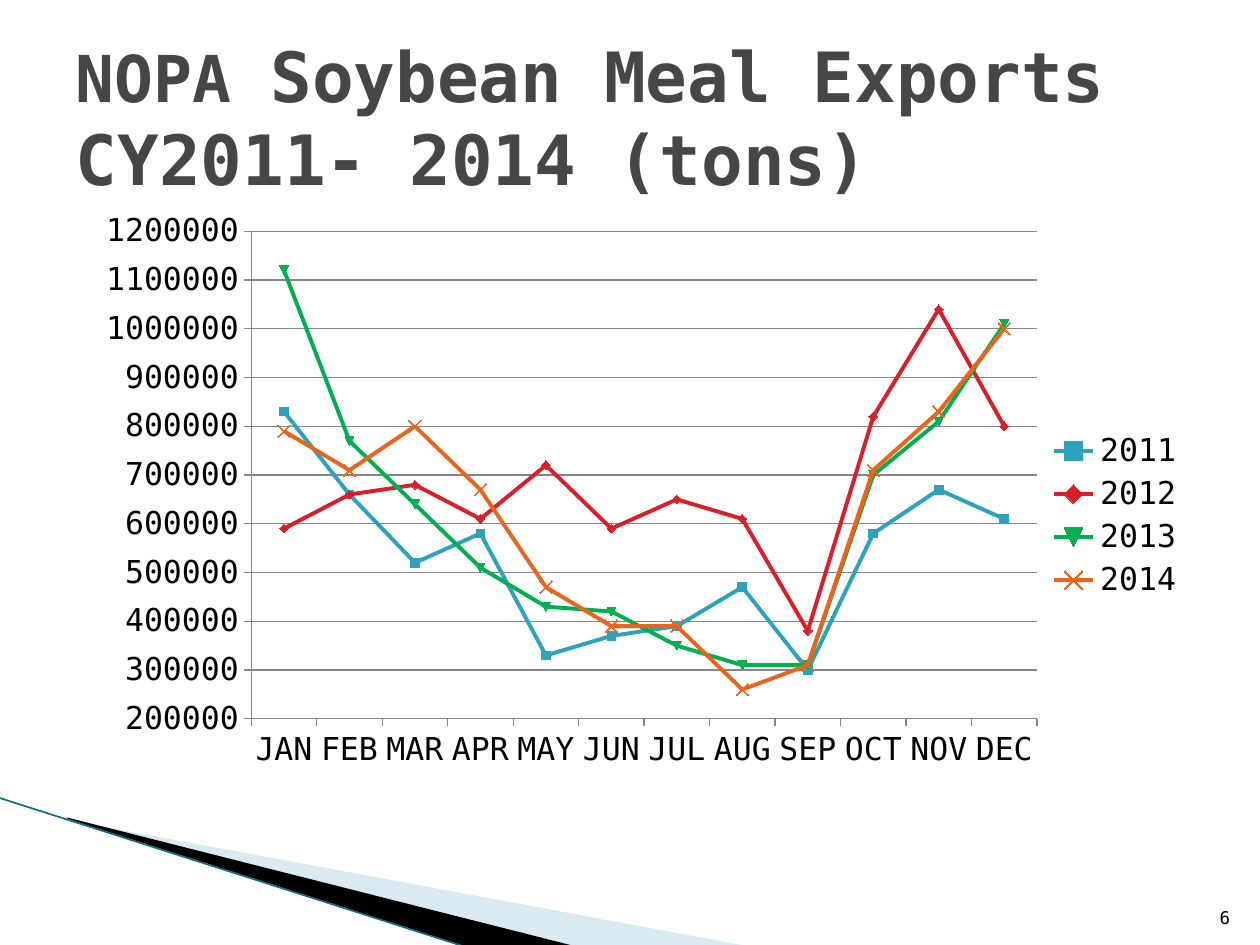
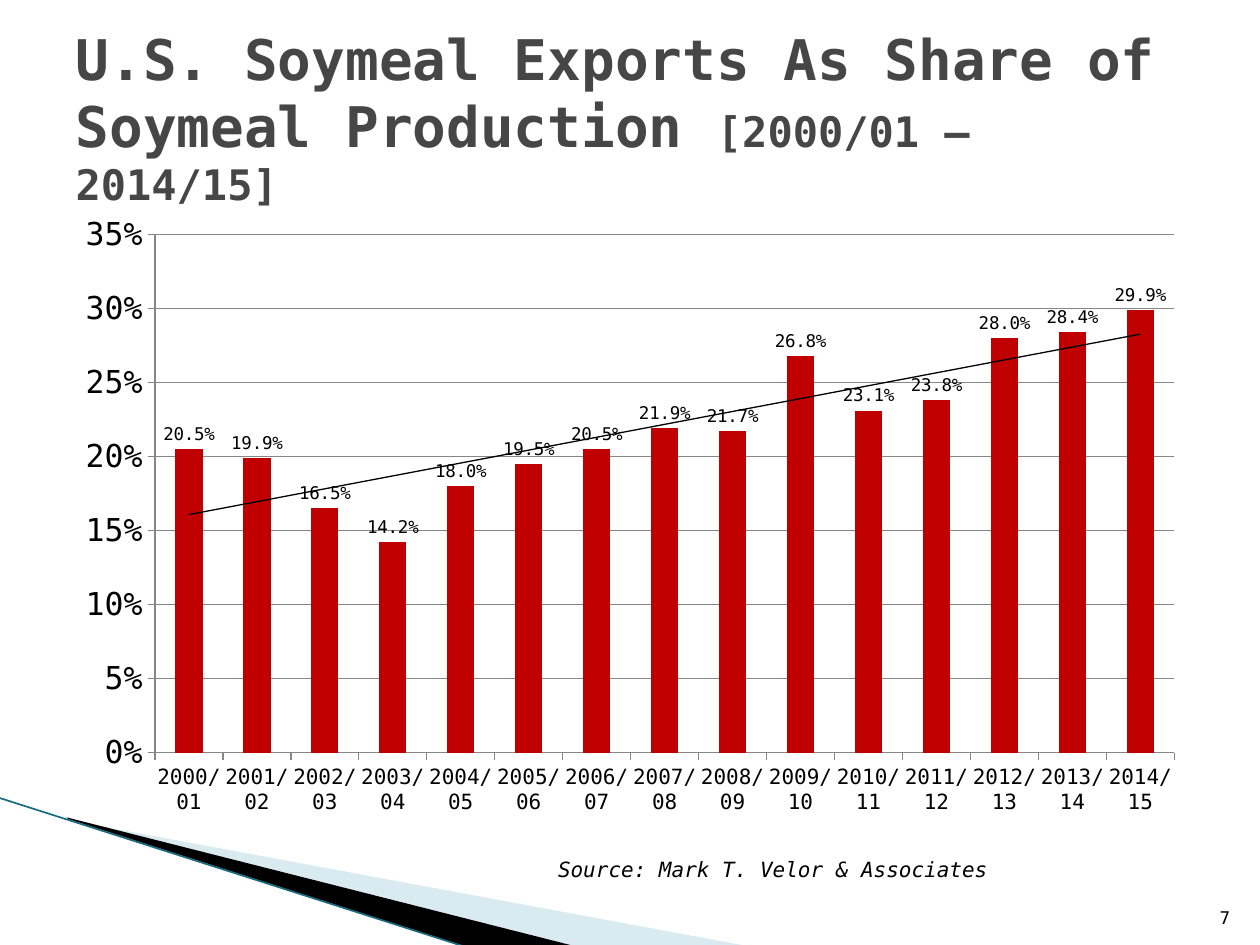
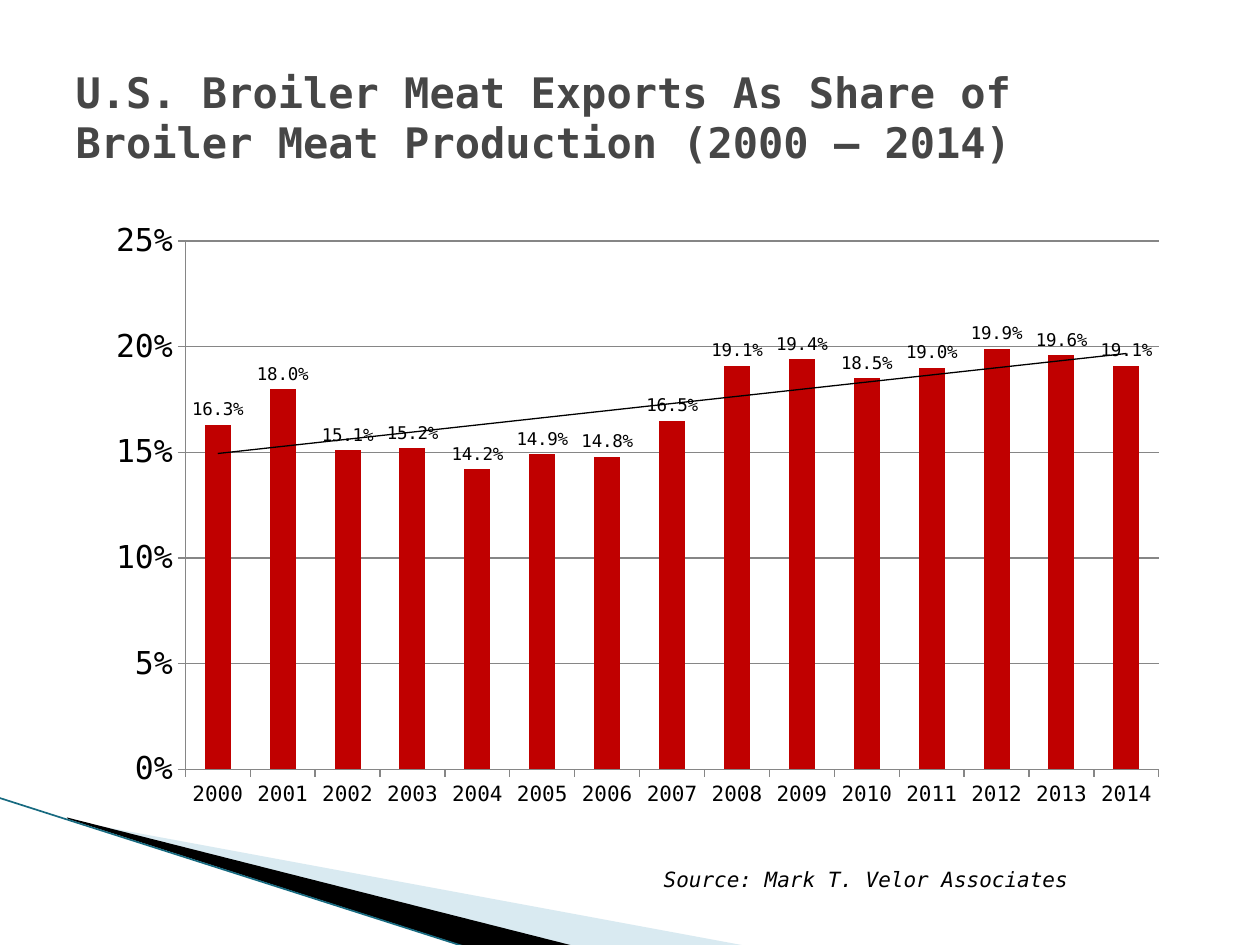
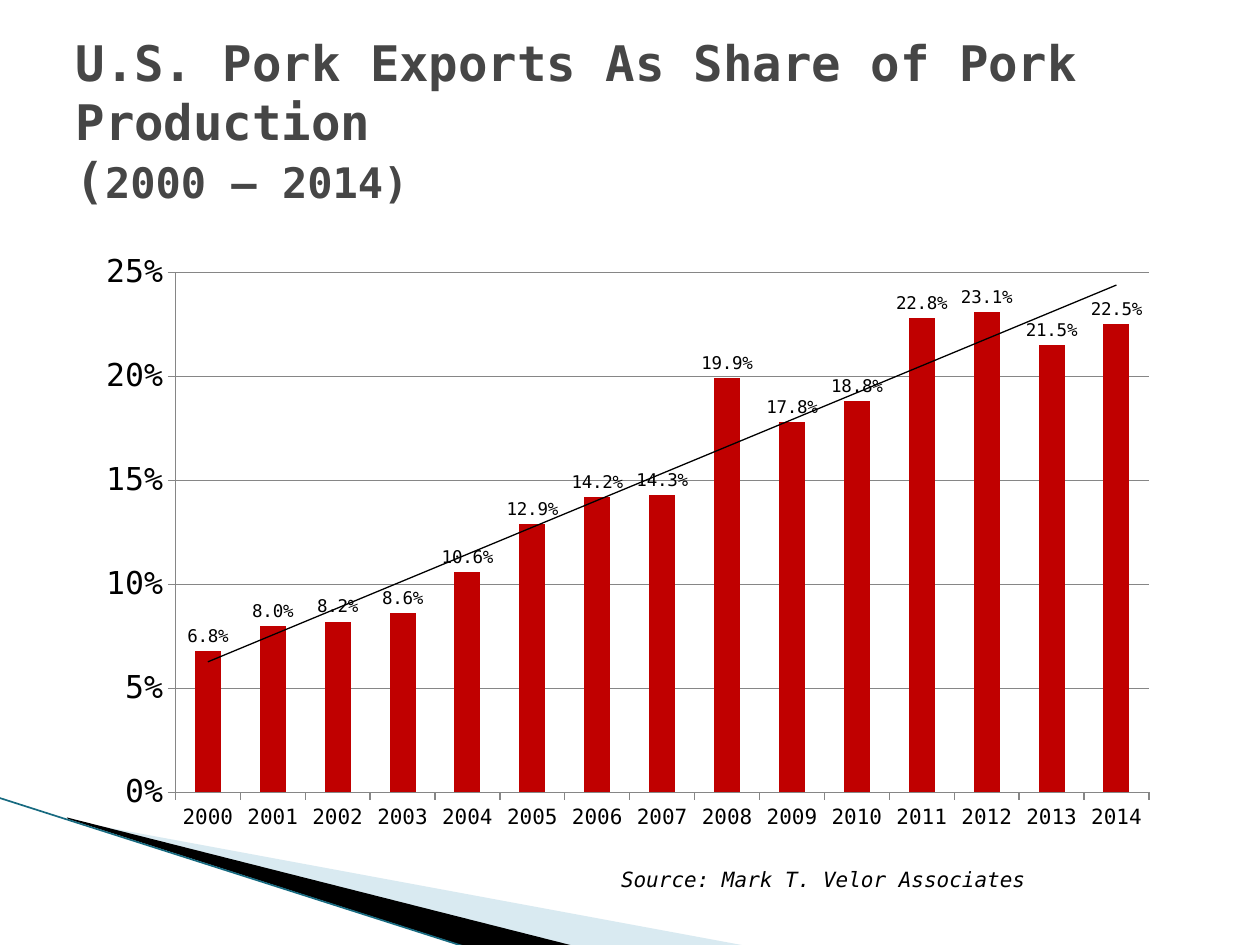
from lxml.etree import SubElement
from pptx import Presentation
from pptx.chart.data import CategoryChartData
from pptx.dml.color import RGBColor
from pptx.enum.chart import XL_CHART_TYPE as Kind, XL_LABEL_POSITION as LabelPos
from pptx.enum.chart import XL_LEGEND_POSITION as LegendPos, XL_MARKER_STYLE as Marker
from pptx.enum.chart import XL_TICK_MARK as Tick
from pptx.enum.shapes import MSO_CONNECTOR as Connector
from pptx.enum.text import MSO_ANCHOR as Anchor, MSO_AUTO_SIZE as AutoSize, PP_ALIGN as Align
from pptx.oxml import parse_xml
from pptx.oxml.ns import nsdecls, qn
from pptx.util import Cm, Pt

FONT = "DejaVu Sans Mono"
BLACK = RGBColor(0x00, 0x00, 0x00)
TITLE_GREY = RGBColor(0x46, 0x46, 0x46)
GRID_GREY = RGBColor(0x86, 0x86, 0x86)
PALE_BLUE = RGBColor(0xA0, 0xCB, 0xDC)
TEAL = RGBColor(0x17, 0x6A, 0x80)
BAR_RED = RGBColor(0xC0, 0x00, 0x00)
BLUE = RGBColor(0x2D, 0xA2, 0xBF)
RED = RGBColor(0xDA, 0x1F, 0x28)
GREEN = RGBColor(0x00, 0xB0, 0x50)
ORANGE = RGBColor(0xEB, 0x64, 0x1B)

PALE_WEDGE = [(1.4, 16.54), (15.11, 19.08), (11.58, 19.08), (1.4, 16.51)]
BLACK_WEDGE = [(1.35, 16.48), (11.61, 19.08), (9.45, 19.1), (1.37, 16.51)]
WEDGE_EDGE = (-0.03, 16.08, 9.42, 19.1)

MONTHS = "JAN FEB MAR APR MAY JUN JUL AUG SEP OCT NOV DEC".split()
MEAL_EXPORTS = {  # thousand tons a month
    "2011": [830, 660, 520, 580, 330, 370, 390, 470, 300, 580, 670, 610],
    "2012": [590, 660, 680, 610, 720, 590, 650, 610, 380, 820, 1040, 800],
    "2013": [1120, 770, 640, 510, 430, 420, 350, 310, 310, 700, 810, 1010],
    "2014": [790, 710, 800, 670, 470, 390, 390, 260, 310, 710, 830, 1000],
}
YEAR_STYLES = [(BLUE, Marker.AUTOMATIC, 5), (RED, Marker.AUTOMATIC, 5),
               (GREEN, Marker.AUTOMATIC, 5), (ORANGE, Marker.X, 7)]

YEARS = [str(y) for y in range(2000, 2015)]
SEASONS = [f"{y}/{(y + 1) % 100:02}" for y in range(2000, 2015)]
SOYMEAL = [20.5, 19.9, 16.5, 14.2, 18.0, 19.5, 20.5, 21.9, 21.7, 26.8, 23.1, 23.8, 28.0, 28.4, 29.9]
BROILER = [16.3, 18.0, 15.1, 15.2, 14.2, 14.9, 14.8, 16.5, 19.1, 19.4, 18.5, 19.0, 19.9, 19.6, 19.1]
PORK = [6.8, 8.0, 8.2, 8.6, 10.6, 12.9, 14.2, 14.3, 19.9, 17.8, 18.8, 22.8, 23.1, 21.5, 22.5]


def set_font(font, size, color=BLACK, **extra):
    style = {"name": FONT, "size": Pt(size), **extra}
    for name, value in style.items():
        setattr(font, name, value)
    font.color.rgb = color


def set_line(line, color, width):
    line.color.rgb = color
    line.width = Pt(width)


class Deck:
    def __init__(self):
        self.prs = Presentation()
        self.prs.slide_width, self.prs.slide_height = Cm(25.4), Cm(19.05)
        self.layout = self.prs.slide_layouts[5]
        self.s = None

    def new_slide(self):
        first = self.s is None
        self.s = self.prs.slides.add_slide(self.layout)
        if first:
            self.decorate_layout()

    def decorate_layout(self):
        """Draw the corner band once and move it behind everything on the layout."""
        edge = self.s.shapes.add_connector(Connector.STRAIGHT, *map(Cm, WEDGE_EDGE))
        set_line(edge.line, TEAL, 0.95)
        SubElement(edge.element.spPr, qn("a:effectLst"))
        pale = self.wedge(PALE_WEDGE, PALE_BLUE)
        color = pale.element.spPr.find(qn("a:solidFill"))[0]
        SubElement(color, qn("a:alpha"), val="40000")
        band = [pale, self.wedge(BLACK_WEDGE, BLACK), edge]
        for i, sp in enumerate(band):
            self.layout.shapes.element.insert(2 + i, sp.element)

    def wedge(self, points, color):
        start, *rest = [(Cm(x), Cm(y)) for x, y in points]
        builder = self.s.shapes.build_freeform(*start)
        builder.add_line_segments(rest)
        sp = builder.convert_to_shape()
        sp.shadow.inherit = False
        sp.fill.solid()
        sp.fill.fore_color.rgb = color
        sp.line.fill.background()
        return sp

    def title(self, *runs, top=0.76):
        """Fill the title with (text, size) runs; a newline is a line break."""
        sp = self.s.shapes.title
        sp.left, sp.top, sp.width, sp.height = map(Cm, (1.27, top, 22.86, 3.18))
        tf = sp.text_frame
        for name, value in {"word_wrap": True, "auto_size": AutoSize.NONE,
                            "vertical_anchor": Anchor.MIDDLE}.items():
            setattr(tf, name, value)
        p = tf.paragraphs[0]
        p.alignment = Align.LEFT
        for text, size in runs:
            for i, line in enumerate(text.split("\n")):
                if i:
                    p.add_line_break()
                r = p.add_run()
                r.text = line
                set_font(r.font, size, TITLE_GREY, bold=True)

    def text(self, text, box, size, align=Align.LEFT, anchor=Anchor.TOP, **extra):
        tf = self.s.shapes.add_textbox(*map(Cm, box)).text_frame
        tf.word_wrap = True
        tf.vertical_anchor = anchor
        p = tf.paragraphs[0]
        p.alignment = align
        r = p.add_run()
        r.text = text
        set_font(r.font, size, **extra)

    def number(self, n):
        self.text(str(n), (24.03, 17.81, 1.02, 1.02), 10, Align.RIGHT, Anchor.BOTTOM)

    def source(self, text, left, top, width):
        self.text(text, (left, top, width, 0.76), 12, italic=True)

    def chart(self, kind, box, cats, series, low, high, step, number_format):
        data = CategoryChartData()
        data.categories = cats
        for name, values in series.items():
            data.add_series(name, values)
        chart = self.s.shapes.add_chart(kind, *map(Cm, box), data).chart
        chart.has_title = False
        chart.has_legend = False
        set_font(chart.font, 18)
        chart.plots[0].vary_by_categories = False
        axis = chart.value_axis
        for name, value in {"minimum_scale": low, "maximum_scale": high, "major_unit": step,
                            "has_major_gridlines": True}.items():
            setattr(axis, name, value)
        axis.tick_labels.number_format = number_format
        axis.tick_labels.number_format_is_linked = False
        set_line(axis.major_gridlines.format.line, GRID_GREY, 0.75)
        for ax in (axis, chart.category_axis):
            ax.major_tick_mark, ax.minor_tick_mark = Tick.OUTSIDE, Tick.NONE
            set_line(ax.format.line, GRID_GREY, 0.75)
        return chart

    def line_chart(self, box, cats, series, styles, plot_area):
        chart = self.chart(Kind.LINE_MARKERS, box, cats, series, 200000, 1200000, 100000, "General")
        chart.has_legend = True
        chart.legend.position = LegendPos.RIGHT
        chart.legend.include_in_layout = False
        set_font(chart.legend.font, 18)
        for ser, (color, marker, size) in zip(chart.plots[0].series, styles):
            ser.smooth = False
            set_line(ser.format.line, color, 2.25)
            ser.marker.style, ser.marker.size = marker, size
            ser.marker.format.fill.solid()
            ser.marker.format.fill.fore_color.rgb = color
            set_line(ser.marker.format.line, color, 0.75)
        self.place_plot(chart, plot_area)

    def place_plot(self, chart, plot_area):
        area = chart.element.xpath(".//c:plotArea")[0]
        for old in area.findall(qn("c:layout")):
            area.remove(old)
        layout = SubElement(area, qn("c:layout"))
        area.insert(0, layout)
        manual = SubElement(layout, qn("c:manualLayout"))
        settings = {"layoutTarget": "inner", "xMode": "edge", "yMode": "edge",
                    **dict(zip("xywh", plot_area))}
        for tag, value in settings.items():
            SubElement(manual, qn(f"c:{tag}"), val=str(value))

    def share_chart(self, box, cats, percents, high):
        """Columns of percentages with value labels and a linear trend."""
        values = [round(v / 100, 3) for v in percents]
        chart = self.chart(Kind.COLUMN_CLUSTERED, box, cats, {"Series 1": values},
                           0, high, 0.05, "0%")
        set_font(chart.category_axis.tick_labels.font, 12)
        plot = chart.plots[0]
        plot.gap_width = 150
        ser = plot.series[0]
        ser.format.fill.solid()
        ser.format.fill.fore_color.rgb = BAR_RED
        labels = ser.data_labels
        for name, value in {"show_value": True, "number_format": "0.0%",
                            "number_format_is_linked": False,
                            "position": LabelPos.OUTSIDE_END}.items():
            setattr(labels, name, value)
        set_font(labels.font, 10)
        trend = parse_xml(
            f'<c:trendline {nsdecls("c", "a")}><c:spPr><a:ln w="9525"><a:solidFill>'
            f'<a:srgbClr val="{BLACK}"/></a:solidFill></a:ln></c:spPr>'
            '<c:trendlineType val="linear"/><c:dispRSqr val="0"/><c:dispEq val="0"/>'
            '</c:trendline>')
        chart.element.xpath(".//c:ser/c:cat")[0].addprevious(trend)


def main():
    deck = Deck()
    wide_chart = (1.27, 4.11, 22.86, 12.57)

    deck.new_slide()
    deck.title(("NOPA ", 36.9), ("Soybean Meal Exports\nCY2011- 2014 (tons)", 39.6))
    tons = {year: [v * 1000 for v in values] for year, values in MEAL_EXPORTS.items()}
    deck.line_chart(wide_chart, MONTHS, tons, YEAR_STYLES, (0.166, 0.044, 0.693, 0.782))
    deck.number(6)

    deck.new_slide()
    deck.title(("U.S. Soymeal Exports As Share of Soymeal Production ", 32),
               ("[2000/01 – 2014/15]", 24))
    deck.share_chart(wide_chart, SEASONS, SOYMEAL, 0.35)
    deck.source("Source: Mark T. Velor & Associates", 11, 17.15, 10.16)
    deck.number(7)

    deck.new_slide()
    deck.title(("U.S. Broiler Meat Exports As Share of Broiler Meat Production (2000 – 2014)", 24))
    deck.share_chart((1.9, 4.24, 21.9, 12.27), YEARS, BROILER, 0.25)
    deck.source("Source: Mark T. Velor Associates", 13.13, 17.35, 10.59)

    deck.new_slide()
    deck.title(("U.S. Pork Exports As Share of Pork Production\n(", 28),
               ("2000 – 2014)", 24), top=0.84)
    deck.share_chart((1.7, 4.88, 21.9, 12.09), YEARS, PORK, 0.25)
    deck.source("Source: Mark T. Velor Associates", 12.27, 17.35, 8.89)

    deck.prs.save("out.pptx")


if __name__ == "__main__":
    main()
